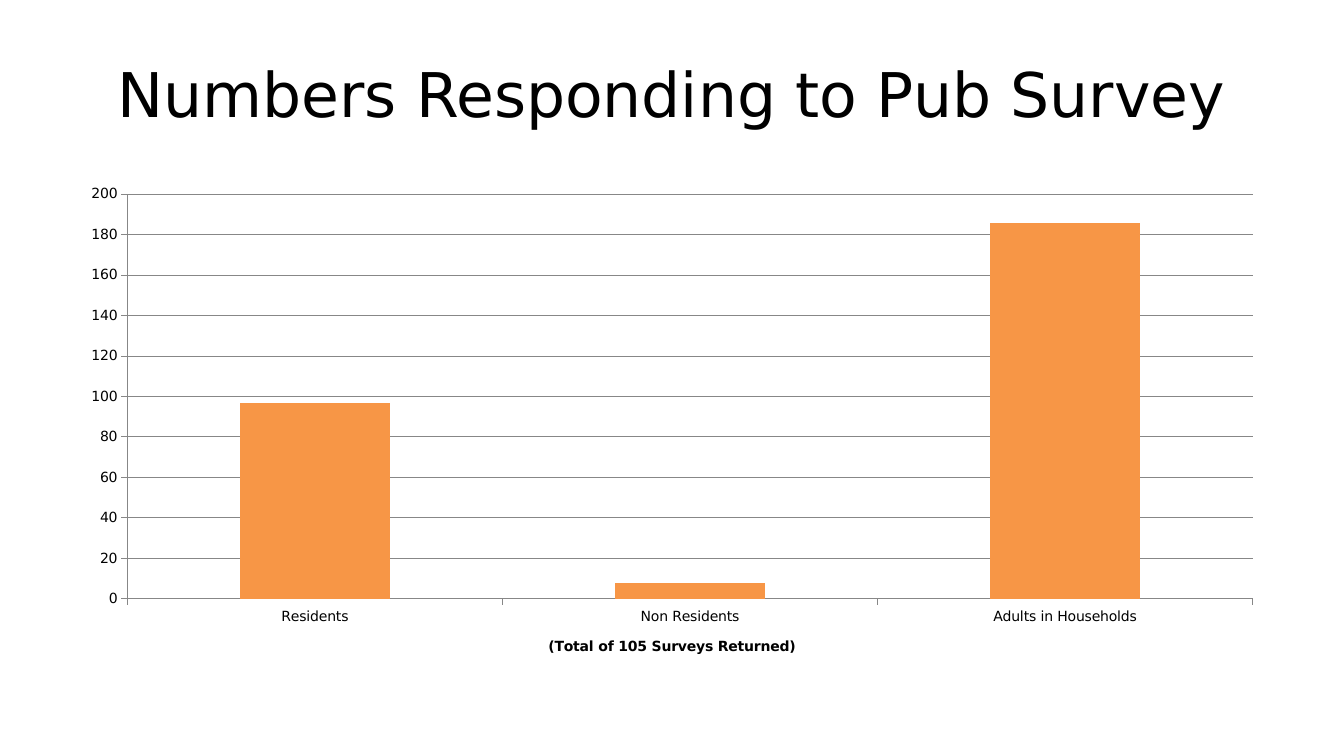
from dataclasses import dataclass

from pptx import Presentation
from pptx.chart.data import CategoryChartData
from pptx.dml.color import RGBColor
from pptx.enum.chart import XL_CHART_TYPE, XL_TICK_MARK
from pptx.enum.text import MSO_ANCHOR, PP_ALIGN
from pptx.util import Pt

COLUMNS = XL_CHART_TYPE.COLUMN_CLUSTERED
TICK_OUT = XL_TICK_MARK.OUTSIDE
TICK_NONE = XL_TICK_MARK.NONE
MIDDLE = MSO_ANCHOR.MIDDLE
CENTER = PP_ALIGN.CENTER
TITLE_ONLY = 5


@dataclass(frozen=True)
class Theme:
    font: str = "DejaVu Sans"
    text: RGBColor = RGBColor(0x00, 0x00, 0x00)
    bar: RGBColor = RGBColor(0xF7, 0x96, 0x46)
    line: RGBColor = RGBColor(0x87, 0x87, 0x87)
    title_size: int = 44
    chart_size: int = 10
    line_width: float = 0.75


THEME = Theme()
RESPONSES = {"Residents": 97, "Non Residents": 8, "Adults in Households": 186}


def set_font(font, size, bold=False):
    font.name = THEME.font
    font.size = Pt(size)
    font.bold = bold
    font.color.rgb = THEME.text


def set_line(line):
    line.color.rgb = THEME.line
    line.width = Pt(THEME.line_width)


def add_title(slide, text, x, y, w, h):
    sp = slide.shapes.title
    sp.left, sp.top, sp.width, sp.height = Pt(x), Pt(y), Pt(w), Pt(h)
    tf = sp.text_frame
    tf.text = text
    tf.word_wrap = True
    tf.vertical_anchor = MIDDLE
    p = tf.paragraphs[0]
    p.alignment = CENTER
    set_font(p.font, THEME.title_size)


def add_response_chart(slide, x, y, w, h):
    data = CategoryChartData()
    data.categories = list(RESPONSES)
    data.add_series("Series 1", list(RESPONSES.values()))
    frame = slide.shapes.add_chart(COLUMNS, Pt(x), Pt(y), Pt(w), Pt(h), data)
    chart = frame.chart
    chart.has_title = False
    chart.has_legend = False
    set_font(chart.font, THEME.chart_size)

    # Columns
    plot = chart.plots[0]
    plot.gap_width = 150
    plot.vary_by_categories = False
    fill = plot.series[0].format.fill
    fill.solid()
    fill.fore_color.rgb = THEME.bar

    # Axes
    for axis in (chart.category_axis, chart.value_axis):
        axis.major_tick_mark = TICK_OUT
        axis.minor_tick_mark = TICK_NONE
        set_line(axis.format.line)
    values = chart.value_axis
    values.minimum_scale, values.maximum_scale, values.major_unit = 0, 200, 20
    values.has_major_gridlines = True
    set_line(values.major_gridlines.format.line)

    # Survey total below the categories
    tf = chart.category_axis.axis_title.text_frame
    tf.text = "(Total of 105 Surveys Returned)"
    set_font(tf.paragraphs[0].font, THEME.chart_size, bold=True)


def main():
    prs = Presentation()
    prs.slide_width, prs.slide_height = Pt(960), Pt(540)
    slide = prs.slides.add_slide(prs.slide_layouts[TITLE_ONLY])
    margin = 48
    width = 960 - 2 * margin
    add_title(slide, "Numbers Responding to Pub Survey", margin, 21.6, width, 90)
    add_response_chart(slide, margin, 126, width, 356.4)
    prs.save("out.pptx")


if __name__ == "__main__":
    main()
